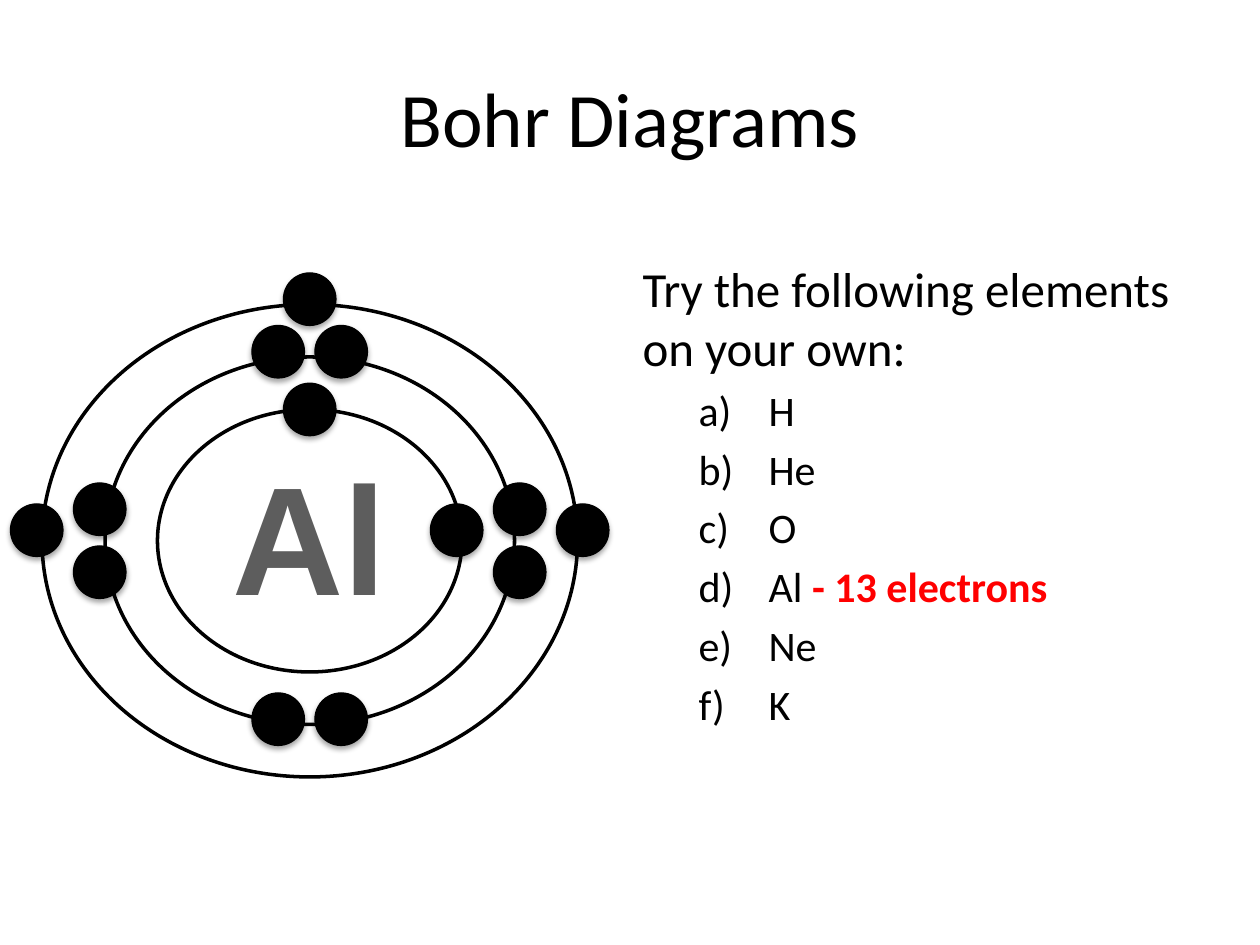
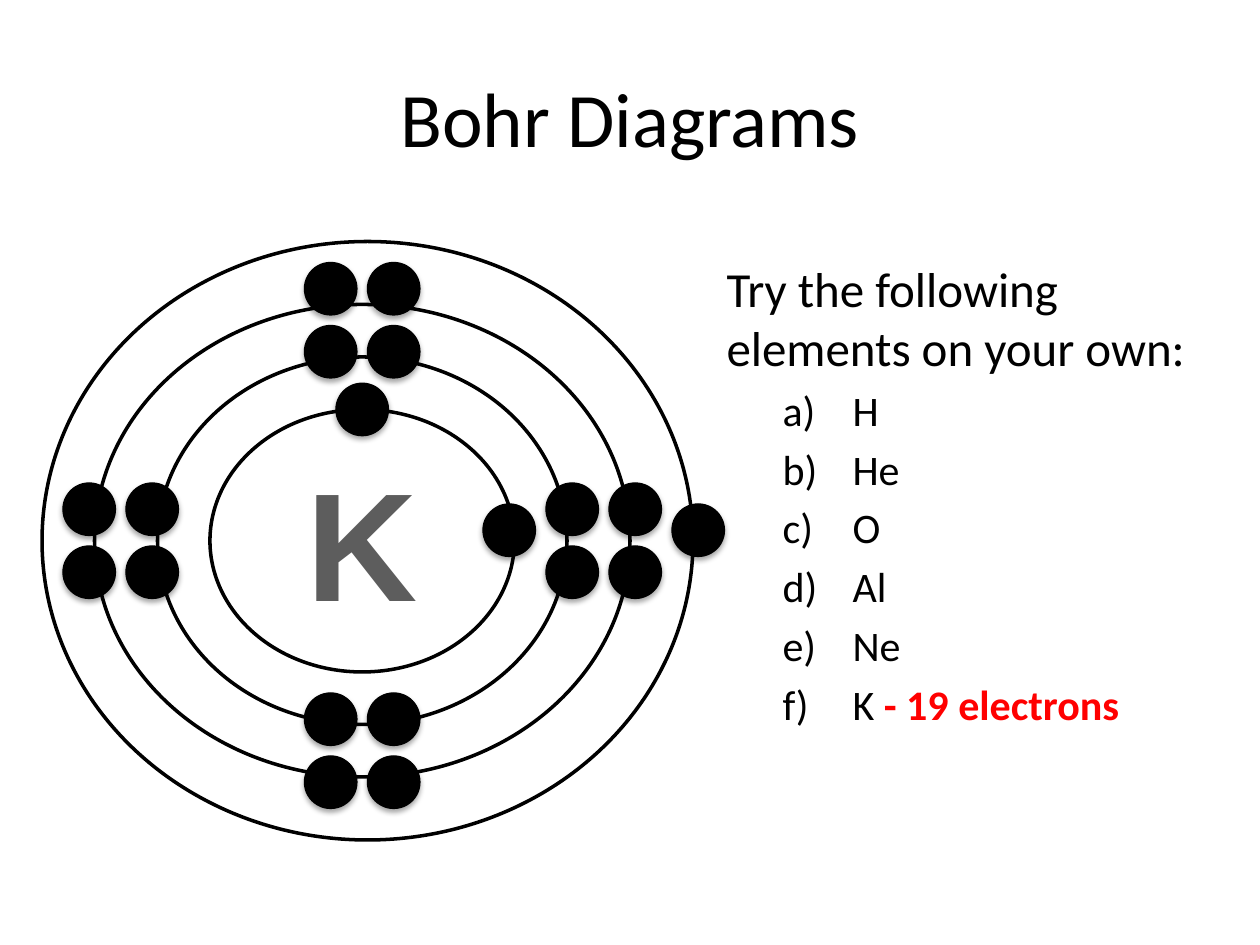
from lxml.etree import SubElement
from pptx import Presentation
from pptx.dml.color import RGBColor
from pptx.enum.shapes import MSO_SHAPE
from pptx.enum.text import MSO_ANCHOR, MSO_AUTO_SIZE, PP_ALIGN
from pptx.oxml.ns import qn
from pptx.util import Pt

BLACK = RGBColor(0x00, 0x00, 0x00)
WHITE = RGBColor(0xFF, 0xFF, 0xFF)
RED = RGBColor(0xFF, 0x00, 0x00)
GREY = RGBColor(0x5D, 0x5D, 0x5D)

ELEMENTS = ["H", "He", "O", "Al", "Ne", "K"]
CENTRE_Y = 309
ELECTRON_SIZE = 30
SYMBOL_SIZE = 120


def paired_electrons(across, up, down):
    """Offsets from the nucleus of four pairs, one on each side of a shell."""
    sides = [(x, y) for x in (-across, across) for y in (-18, 18)]
    ends = [(x, y) for y in (-up, down) for x in (-18, 18)]
    return sides + ends


def add_circle(slide, centre_x, centre_y, width, height, fill, line_width):
    circle = slide.shapes.add_shape(
        MSO_SHAPE.OVAL, Pt(centre_x - width / 2), Pt(centre_y - height / 2), Pt(width), Pt(height))
    circle.fill.solid()
    circle.fill.fore_color.rgb = fill
    circle.line.color.rgb = BLACK
    circle.line.width = Pt(line_width)
    circle.shadow.inherit = False
    return circle


INNER_ELECTRONS = [(84, -6), (0, -75)] + paired_electrons(120, 108, 102)

# Shells run from the outside in: shift of the centre, width, height
INNER_SHELLS = [(0, 306, 270), (0, 234, 210), (0, 174, 150)]

ATOMS = [
    {"symbol": "Al", "count": 13, "centre_x": 177, "symbol_top": 249,
     "list_left": 360, "list_width": 318, "shells": INNER_SHELLS,
     "electrons": INNER_ELECTRONS + [(156, -6), (-156, -6), (0, -138)]},
    {"symbol": "K", "count": 19, "centre_x": 207, "symbol_top": 252,
     "list_left": 408, "list_width": 282, "shells": [(3, 372, 342)] + INNER_SHELLS,
     "electrons": INNER_ELECTRONS + paired_electrons(156, 144, 138) + [(192, -6)]},
]

presentation = Presentation()
presentation.slide_width = Pt(720)
presentation.slide_height = Pt(540)

for atom in ATOMS:
    slide = presentation.slides.add_slide(presentation.slide_layouts[1])
    centre_x = atom["centre_x"]

    title = slide.shapes.title
    title.left, title.top, title.width, title.height = Pt(36), Pt(21.6), Pt(648), Pt(90)
    title.text_frame.text = "Bohr Diagrams"
    title.text_frame.vertical_anchor = MSO_ANCHOR.MIDDLE
    paragraph = title.text_frame.paragraphs[0]
    paragraph.alignment = PP_ALIGN.CENTER
    paragraph.font.name = "Calibri"
    paragraph.font.size = Pt(44)
    paragraph.font.color.rgb = BLACK

    # Task and lettered list of elements
    body = slide.placeholders[1]
    body.left, body.top = Pt(atom["list_left"]), Pt(144)
    body.width, body.height = Pt(atom["list_width"]), Pt(294)
    text_frame = body.text_frame
    text_frame.auto_size = MSO_AUTO_SIZE.NONE
    text_frame.text = "\n".join(["Try the following elements on your own:"] + ELEMENTS)
    for index, paragraph in enumerate(text_frame.paragraphs):
        is_element = index > 0
        paragraph.level = 1 if is_element else 0
        paragraph.font.name = "Calibri"
        paragraph.font.size = Pt(24 if is_element else 28)
        paragraph.font.color.rgb = BLACK
        properties = paragraph._p.get_or_add_pPr()
        properties.set("marL", str(Pt(72 if is_element else 0)))
        properties.set("indent", str(Pt(-40 if is_element else 0)))
        bullet = properties.makeelement(qn("a:buAutoNum" if is_element else "a:buNone"))
        if is_element:
            bullet.set("type", "alphaLcParenR")
        properties.find(qn("a:defRPr")).addprevious(bullet)
        if paragraph.text == atom["symbol"]:
            paragraph.runs[0].text += " "
            answer = paragraph.add_run()
            answer.text = f"- {atom['count']} electrons"
            answer.font.bold = True
            answer.font.color.rgb = RED

    # Bohr diagram
    for shift, width, height in atom["shells"]:
        add_circle(slide, centre_x + shift, CENTRE_Y, width, height, WHITE, 2)

    for offset_x, offset_y in atom["electrons"]:
        electron = add_circle(slide, centre_x + offset_x, CENTRE_Y + offset_y,
                              ELECTRON_SIZE, ELECTRON_SIZE, BLACK, 0.75)
        effects = electron._element.spPr.find(qn("a:effectLst"))
        shadow = SubElement(effects, qn("a:outerShdw"), blurRad=str(Pt(3.1)),
                            dist=str(Pt(1.8)), dir="5400000", rotWithShape="0")
        shadow_color = SubElement(shadow, qn("a:srgbClr"), val=str(BLACK))
        SubElement(shadow_color, qn("a:alpha"), val="35000")

    symbol = slide.shapes.add_textbox(Pt(centre_x - SYMBOL_SIZE / 2), Pt(atom["symbol_top"]),
                                      Pt(SYMBOL_SIZE), Pt(SYMBOL_SIZE))
    symbol.text_frame.word_wrap = True
    symbol.text_frame.text = atom["symbol"]
    paragraph = symbol.text_frame.paragraphs[0]
    paragraph.alignment = PP_ALIGN.CENTER
    paragraph.font.name = "Arial"
    paragraph.font.size = Pt(88)
    paragraph.font.bold = True
    paragraph.font.color.rgb = GREY

presentation.save("out.pptx")
